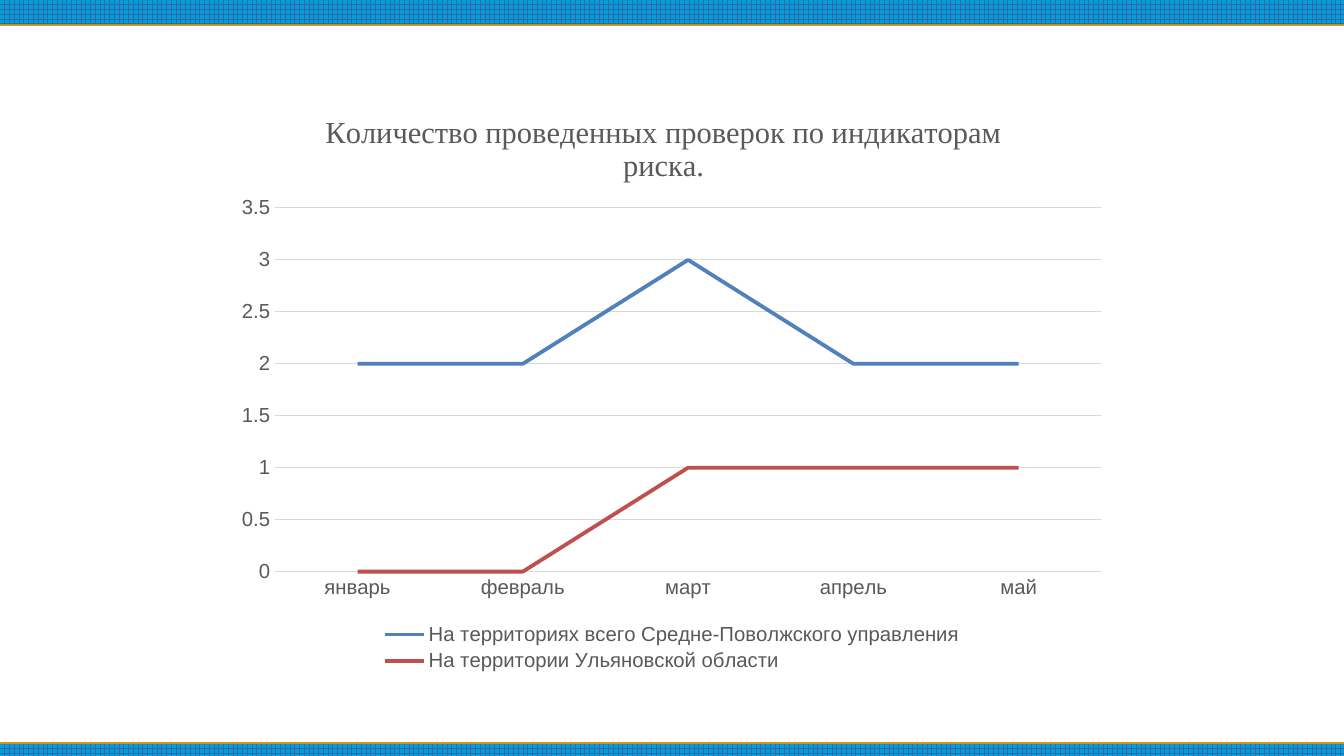
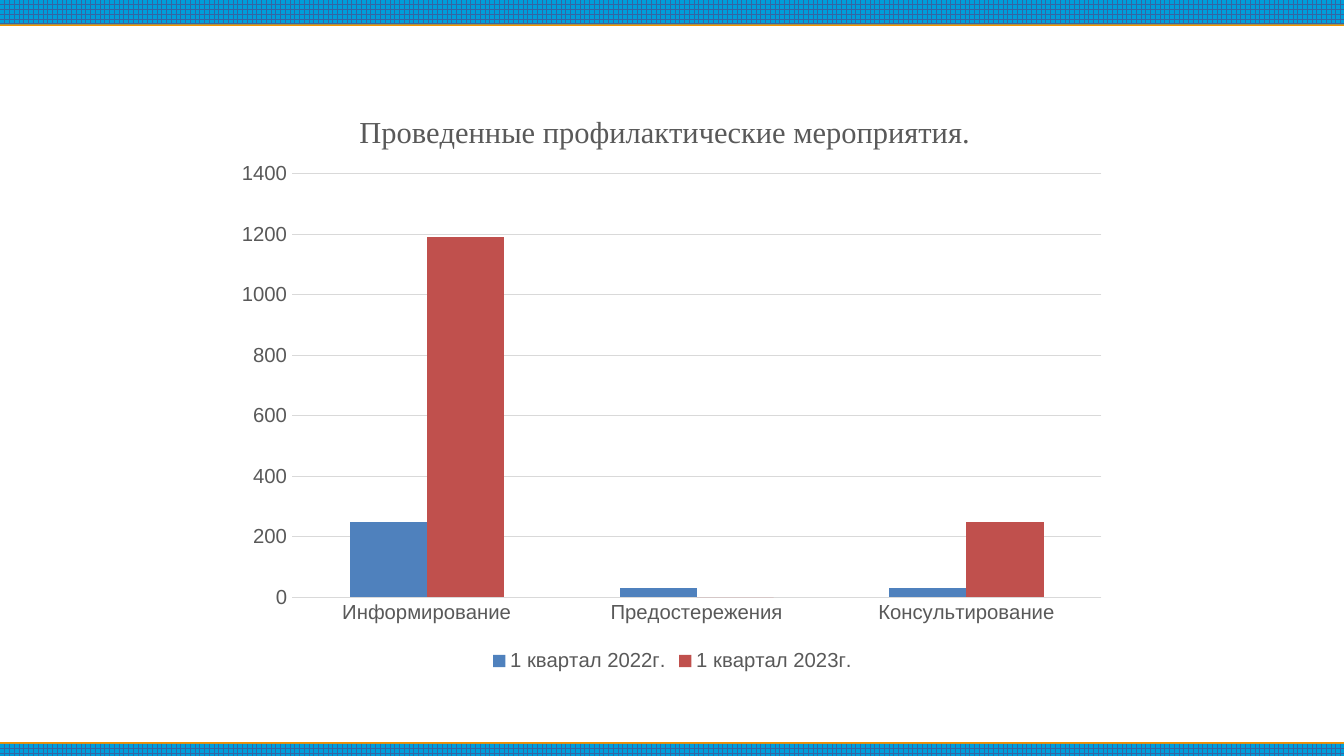
from dataclasses import dataclass

from lxml import etree
from pptx import Presentation
from pptx.chart.data import CategoryChartData
from pptx.dml.color import RGBColor
from pptx.enum.chart import XL_CHART_TYPE, XL_LEGEND_POSITION, XL_MARKER_STYLE, XL_TICK_MARK
from pptx.enum.dml import MSO_PATTERN
from pptx.enum.shapes import MSO_SHAPE
from pptx.oxml.ns import qn
from pptx.util import Pt

LINE = XL_CHART_TYPE.LINE
COLUMN = XL_CHART_TYPE.COLUMN_CLUSTERED
BOTTOM = XL_LEGEND_POSITION.BOTTOM
NO_MARKER = XL_MARKER_STYLE.NONE
NO_TICK = XL_TICK_MARK.NONE
GRID = MSO_PATTERN.LARGE_GRID
RECT = MSO_SHAPE.RECTANGLE

SLIDE_W, SLIDE_H = 793.44, 446.4
CHART_X, CHART_Y, CHART_W, CHART_H = 132.5, 46.8, 529.2, 352.8
BAND_BLUE, BAND_GRID, BAND_EDGE = "009EDA", "3465A4", "F49100"
GRAY, RULE = "595959", "D9D9D9"
SERIES_COLORS = ("4F81BD", "C0504D")


def rgb(color: str) -> RGBColor:
    return RGBColor.from_string(color)


BASE_FONT = {"name": "Arial", "size": Pt(10)}
LABEL_FONT = {"name": "Arial", "size": Pt(12)}
TITLE_FONT = {"name": "Times New Roman", "size": Pt(18), "bold": False}


@dataclass(frozen=True)
class Band:
    top: float
    height: float
    shadow_angle: int


@dataclass(frozen=True)
class Series:
    name: str
    values: tuple[int, ...]


@dataclass(frozen=True)
class ChartSlide:
    kind: XL_CHART_TYPE
    title: str
    title_at: tuple[float, float]
    plot_box: tuple[float, float, float, float]
    categories: tuple[str, ...]
    series: tuple[Series, ...]


BANDS = (Band(0, 14.4, 90), Band(439.2, 7.2, 270))

SLIDES = (
    ChartSlide(
        LINE,
        "Количество проведенных проверок по индикаторам риска.",
        (56.4, 17),
        (29.8, 76, 488, 214.8),
        ("январь", "февраль", "март", "апрель", "май"),
        (
            Series("На территориях всего Средне-Поволжского управления", (2, 2, 3, 2, 2)),
            Series("На территории Ульяновской области", (0, 0, 1, 1, 1)),
        ),
    ),
    ChartSlide(
        COLUMN,
        "Проведенные профилактические мероприятия.",
        (76.4, 17),
        (39.8, 55.8, 478, 250.2),
        ("Информирование", "Предостережения", "Консультирование"),
        (
            Series("1 квартал 2022г.", (250, 30, 30)),
            Series("1 квартал 2023г.", (1190, 0, 250)),
        ),
    ),
)


def style_font(font, values: dict, color: str = GRAY) -> None:
    for name, value in values.items():
        setattr(font, name, value)
    font.color.rgb = rgb(color)


def style_line(line, color: str, width: float) -> None:
    line.color.rgb = rgb(color)
    line.width = Pt(width)


def add_band(prs, s, band: Band, shape_id: int) -> None:
    sp = s.shapes.add_shape(RECT, 0, Pt(band.top), prs.slide_width, Pt(band.height))
    sp.name = f"Band {shape_id}"
    sp.fill.patterned()
    sp.fill.pattern = GRID
    sp.fill.fore_color.rgb = rgb(BAND_GRID)
    sp.fill.back_color.rgb = rgb(BAND_BLUE)
    sp.line.fill.background()
    sp.shadow.inherit = False
    effects = sp.element.spPr.find(qn("a:effectLst"))
    shadow = etree.SubElement(
        effects,
        qn("a:outerShdw"),
        dist=str(Pt(0.9)),
        dir=str(band.shadow_angle * 60000),
        rotWithShape="0",
    )
    etree.SubElement(shadow, qn("a:srgbClr"), val=BAND_EDGE)
    sp.element.nvSpPr.cNvPr.set("id", str(shape_id))
    prs.slide_master.shapes.element.append(sp.element)


def set_layout(parent, index: int, values: dict) -> None:
    layout = parent.find(qn("c:layout"))
    if layout is None:
        layout = etree.Element(qn("c:layout"))
        parent.insert(index, layout)
    manual = etree.SubElement(layout, qn("c:manualLayout"))
    for tag, value in values.items():
        etree.SubElement(manual, qn(f"c:{tag}"), val=str(value))


def set_title(chart, item: ChartSlide) -> None:
    tf = chart.chart_title.text_frame
    r = tf.paragraphs[0].add_run()
    r.text = item.title
    style_font(r.font, TITLE_FONT)
    x, y = item.title_at
    set_layout(
        chart.chart_title.element,
        1,
        {"xMode": "edge", "yMode": "edge", "x": x / CHART_W, "y": y / CHART_H},
    )


def style_axes(chart, kind: XL_CHART_TYPE) -> None:
    for axis in (chart.category_axis, chart.value_axis):
        axis.major_tick_mark = axis.minor_tick_mark = NO_TICK
        axis.format.line.fill.background()
        style_font(axis.tick_labels.font, LABEL_FONT)
    style_line(chart.value_axis.major_gridlines.format.line, RULE, 0.75)
    if kind == LINE:
        style_line(chart.category_axis.format.line, RULE, 0.75)


def style_series(chart, kind: XL_CHART_TYPE) -> None:
    plot = chart.plots[0]
    plot.vary_by_categories = False
    if kind == COLUMN:
        plot.gap_width = 150
    for series, color in zip(plot.series, SERIES_COLORS):
        if kind == LINE:
            series.smooth = False
            series.marker.style = NO_MARKER
            style_line(series.format.line, color, 2.25)
        else:
            series.format.fill.solid()
            series.format.fill.fore_color.rgb = rgb(color)


def add_chart(s, item: ChartSlide) -> None:
    data = CategoryChartData()
    data.categories = item.categories
    for series in item.series:
        data.add_series(series.name, series.values)
    box = (Pt(v) for v in (CHART_X, CHART_Y, CHART_W, CHART_H))
    chart = s.shapes.add_chart(item.kind, *box, data).chart
    style_font(chart.font, BASE_FONT, "000000")
    set_title(chart, item)
    style_axes(chart, item.kind)
    style_series(chart, item.kind)
    chart.has_legend = True
    chart.legend.position = BOTTOM
    chart.legend.include_in_layout = False
    style_font(chart.legend.font, LABEL_FONT)
    x, y, w, h = item.plot_box
    set_layout(
        chart.element.find(f".//{qn('c:plotArea')}"),
        0,
        {
            "layoutTarget": "inner",
            "xMode": "edge",
            "yMode": "edge",
            "x": x / CHART_W,
            "y": y / CHART_H,
            "w": w / CHART_W,
            "h": h / CHART_H,
        },
    )


def main() -> None:
    prs = Presentation()
    prs.slide_width, prs.slide_height = Pt(SLIDE_W), Pt(SLIDE_H)
    blank = prs.slide_layouts[6]
    slides = [prs.slides.add_slide(blank) for _ in SLIDES]
    for shape_id, band in enumerate(BANDS, start=20):
        add_band(prs, slides[0], band, shape_id)
    for s, item in zip(slides, SLIDES):
        add_chart(s, item)
    prs.save("out.pptx")


if __name__ == "__main__":
    main()
